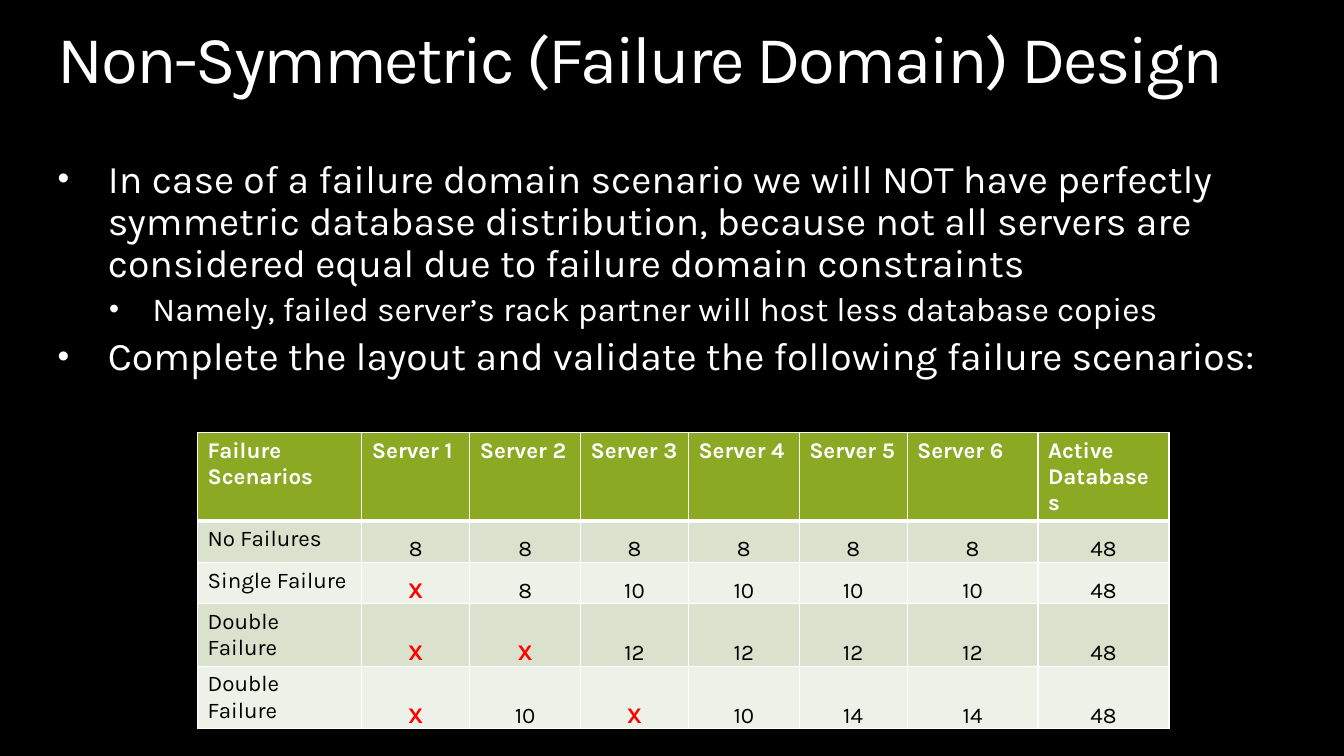
import pptx
import pptx.dml.color
import pptx.enum.text
import pptx.oxml
import pptx.oxml.ns
import pptx.util

Cm = pptx.util.Cm
Pt = pptx.util.Pt
RGBColor = pptx.dml.color.RGBColor
Align = pptx.enum.text.PP_ALIGN
Anchor = pptx.enum.text.MSO_ANCHOR

BLACK = RGBColor(0x00, 0x00, 0x00)
WHITE = RGBColor(0xFF, 0xFF, 0xFF)
RED = RGBColor(0xFF, 0x00, 0x00)
HEADER_GREEN = RGBColor(0x8C, 0xA9, 0x23)
BAND_COLORS = [RGBColor(0xDA, 0xE2, 0xCD), RGBColor(0xEE, 0xF1, 0xE8)]
FONT = "Karla"

TITLE = "Non-Symmetric (Failure Domain) Design"
BULLETS = [
    (0, "In case of a failure domain scenario we will NOT have perfectly symmetric "
        "database distribution, because not all servers are considered equal due to "
        "failure domain constraints"),
    (0 + 1, "Namely, failed server’s rack partner will host less database copies"),
    (0, "Complete the layout and validate the following failure scenarios:"),
]
LEVELS = [(28, 1.27, -1.27), (24, 2.39, -1.09)]
SCENARIOS = [
    ["Failure Scenarios", *(f"Server {number}" for number in range(1, 7)), "Active Databases"],
    ["No Failures", "8", "8", "8", "8", "8", "8", "48"],
    ["Single Failure", "X", "8", "10", "10", "10", "10", "48"],
    ["Double Failure", "X", "X", "12", "12", "12", "12", "48"],
    ["Double Failure", "X", "10", "X", "10", "14", "14", "48"],
]
COLUMN_WIDTHS = [4.14, 2.72, 2.79, 2.72, 2.79, 2.72, 3.3, 3.3]
ROW_HEIGHT = 1.04


def format_runs(paragraph, size, color, bold=False):
    for run in paragraph.runs:
        run.font.name = FONT
        run.font.size = Pt(size)
        run.font.bold = bold
        run.font.color.rgb = color


def place_placeholder(shape, left, top, width, height):
    shape.left, shape.top, shape.width, shape.height = Cm(left), Cm(top), Cm(width), Cm(height)
    frame = shape.text_frame
    frame.margin_left = frame.margin_top = frame.margin_right = frame.margin_bottom = 0
    frame.vertical_anchor = Anchor.TOP
    frame.auto_size = pptx.enum.text.MSO_AUTO_SIZE.NONE
    frame.word_wrap = True
    return frame


def add_title(slide, left, top, width, height):
    frame = place_placeholder(slide.shapes.title, left, top, width, height)
    frame.text = TITLE
    paragraph = frame.paragraphs[0]
    paragraph.alignment = Align.LEFT
    paragraph.line_spacing = 0.9
    format_runs(paragraph, 48, WHITE)
    for run in paragraph.runs:
        run.font._element.set("spc", "-150")


def add_bullet(paragraph, indent, hanging):
    properties = paragraph._p.get_or_add_pPr()
    properties.set("marL", str(Cm(indent)))
    properties.set("indent", str(Cm(hanging)))
    for tag, name, value in [
        ("buSzPct", "val", "85000"),
        ("buFont", "typeface", "Arial"),
        ("buChar", "char", "•"),
    ]:
        properties.append(pptx.oxml.parse_xml(
            f'<a:{tag} {pptx.oxml.ns.nsdecls("a")} {name}="{value}"/>'))


def add_body(slide, left, top, width, height):
    frame = place_placeholder(slide.placeholders[1], left, top, width, height)
    frame.text = "\n".join(text for level, text in BULLETS)
    for index, (paragraph, (level, text)) in enumerate(zip(frame.paragraphs, BULLETS)):
        size, indent, hanging = LEVELS[level]
        paragraph.level = level
        add_bullet(paragraph, indent, hanging)
        paragraph.line_spacing = 0.9
        paragraph.space_before = Pt(0.2 * size if index else 0)
        format_runs(paragraph, size, WHITE)


def set_borders(cell, row_index):
    properties = cell._tc.get_or_add_tcPr()
    widths = {
        "lnL": 1,
        "lnR": 1,
        "lnT": 3 if row_index == 1 else 1,
        "lnB": 3 if row_index == 0 else 1,
    }
    for position, (side, width) in enumerate(widths.items()):
        properties.insert(position, pptx.oxml.parse_xml(
            f'<a:{side} {pptx.oxml.ns.nsdecls("a")} w="{Pt(width)}">'
            f'<a:solidFill><a:srgbClr val="{WHITE}"/></a:solidFill></a:{side}>'))


def fill_cell(cell, text, row_index, column_index):
    is_header = row_index == 0
    is_failed = text == "X"
    cell.text = text
    cell.fill.solid()
    cell.fill.fore_color.rgb = HEADER_GREEN if is_header else BAND_COLORS[(row_index - 1) % 2]
    paragraph = cell.text_frame.paragraphs[0]
    if not is_header and column_index > 0:
        cell.vertical_anchor = Anchor.BOTTOM
        cell.margin_left = cell.margin_top = cell.margin_right = Cm(0.03)
        cell.margin_bottom = 0
        paragraph.alignment = Align.CENTER
    color = WHITE if is_header else RED if is_failed else BLACK
    format_runs(paragraph, 16, color, is_header or is_failed)
    set_borders(cell, row_index)


def add_scenario_table(slide, left, top):
    table = slide.shapes.add_table(
        len(SCENARIOS), len(COLUMN_WIDTHS), Cm(left), Cm(top),
        Cm(sum(COLUMN_WIDTHS)), Cm(ROW_HEIGHT * len(SCENARIOS))).table
    for column, width in zip(table.columns, COLUMN_WIDTHS):
        column.width = Cm(width)
    for row_index, texts in enumerate(SCENARIOS):
        table.rows[row_index].height = Cm(ROW_HEIGHT)
        for column_index, text in enumerate(texts):
            fill_cell(table.cell(row_index, column_index), text, row_index, column_index)


def main():
    presentation = pptx.Presentation()
    presentation.slide_width = Cm(33.87)
    presentation.slide_height = Cm(19.05)
    slide = presentation.slides.add_slide(presentation.slide_layouts[1])
    slide.background.fill.solid()
    slide.background.fill.fore_color.rgb = BLACK
    add_title(slide, 1.45, 0.64, 30.96, 1.85)
    add_body(slide, 1.45, 4.01, 30.96, 6.99)
    add_scenario_table(slide, 4.98, 10.9)
    presentation.save("out.pptx")


if __name__ == "__main__":
    main()
